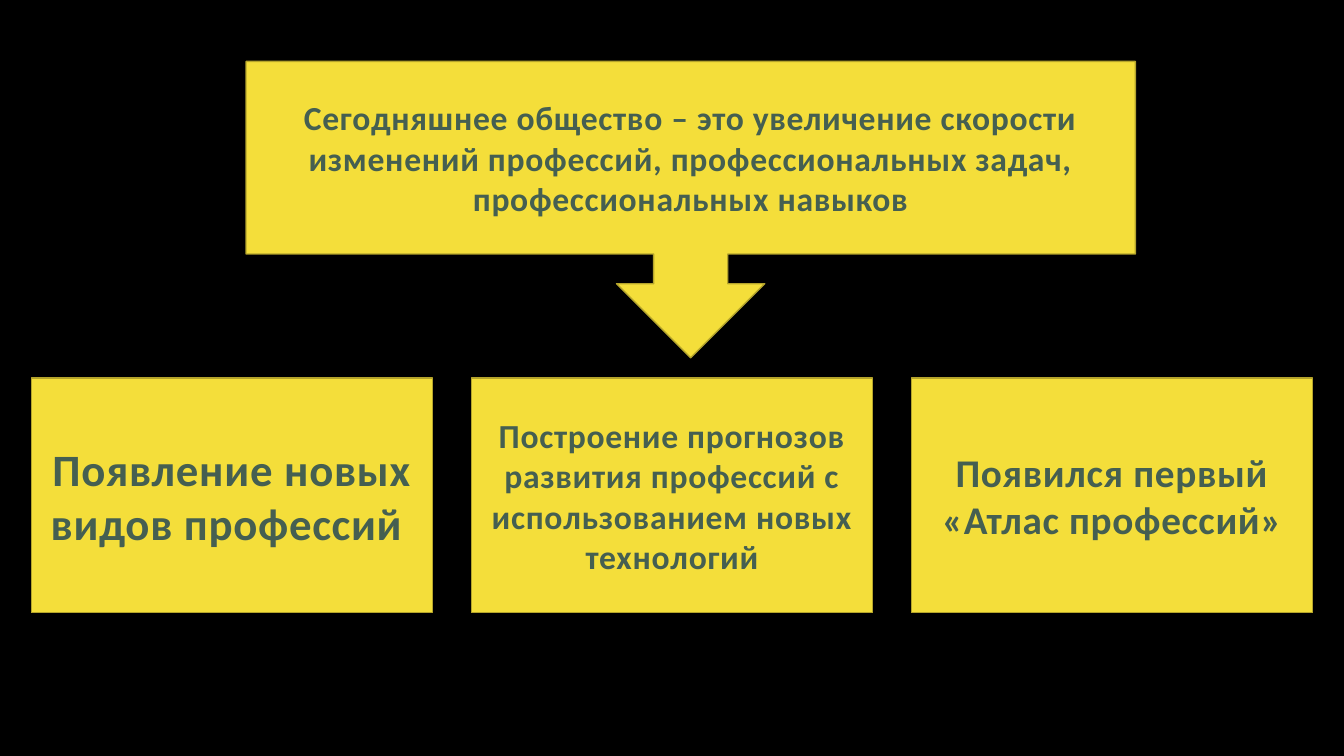
from pptx import Presentation
from pptx.dml.color import RGBColor
from pptx.enum.shapes import MSO_SHAPE as Shape
from pptx.enum.text import MSO_ANCHOR as Anchor, PP_ALIGN as Align
from pptx.util import Inches, Pt

COLORS = {"background": "000000", "box": "F4DE3A", "border": "B5A42B", "text": "455F51"}
FONT = {"name": "Calibri", "bold": True}
LETTER_SPACING = "50"  # hundredths of a point

THESIS = ("Сегодняшнее общество – это увеличение скорости изменений профессий, "
          "профессиональных задач, профессиональных навыков")
CONSEQUENCES = [
    ("Появление новых видов профессий ", 32),
    ("Построение прогнозов развития профессий с использованием новых технологий", 24),
    ("Появился первый «Атлас профессий»", 28),
]
BOX_LEFT, BOX_TOP, BOX_WIDTH, BOX_HEIGHT = 0.31, 3.75, 3.98, 2.33
BOX_STEP = 4.365


def color(part):
    return RGBColor.from_string(COLORS[part])


def add_box(slide, kind, bounds, text, size):
    box = slide.shapes.add_shape(kind, *(Inches(value) for value in bounds))
    box.shadow.inherit = False
    box.fill.solid()
    box.fill.fore_color.rgb = color("box")
    box.line.color.rgb = color("border")
    box.line.width = Pt(1)

    frame = box.text_frame
    frame.word_wrap = True
    frame.vertical_anchor = Anchor.MIDDLE
    paragraph = frame.paragraphs[0]
    paragraph.alignment = Align.CENTER
    run = paragraph.add_run()
    run.text = text
    for attribute, value in {**FONT, "size": Pt(size)}.items():
        setattr(run.font, attribute, value)
    run.font.color.rgb = color("text")
    run.font._element.set("spc", LETTER_SPACING)


def main():
    deck = Presentation()
    deck.slide_width, deck.slide_height = Inches(13.33), Inches(7.5)
    slide = deck.slides.add_slide(deck.slide_layouts[6])
    slide.background.fill.solid()
    slide.background.fill.fore_color.rgb = color("background")

    # Thesis with the arrow pointing to its consequences
    add_box(slide, Shape.DOWN_ARROW_CALLOUT, (2.44, 0.61, 8.82, 2.94), THESIS, 24)

    # Row of consequences
    for column, (text, size) in enumerate(CONSEQUENCES):
        bounds = (BOX_LEFT + column * BOX_STEP, BOX_TOP, BOX_WIDTH, BOX_HEIGHT)
        add_box(slide, Shape.RECTANGLE, bounds, text, size)

    deck.save("out.pptx")


if __name__ == "__main__":
    main()
